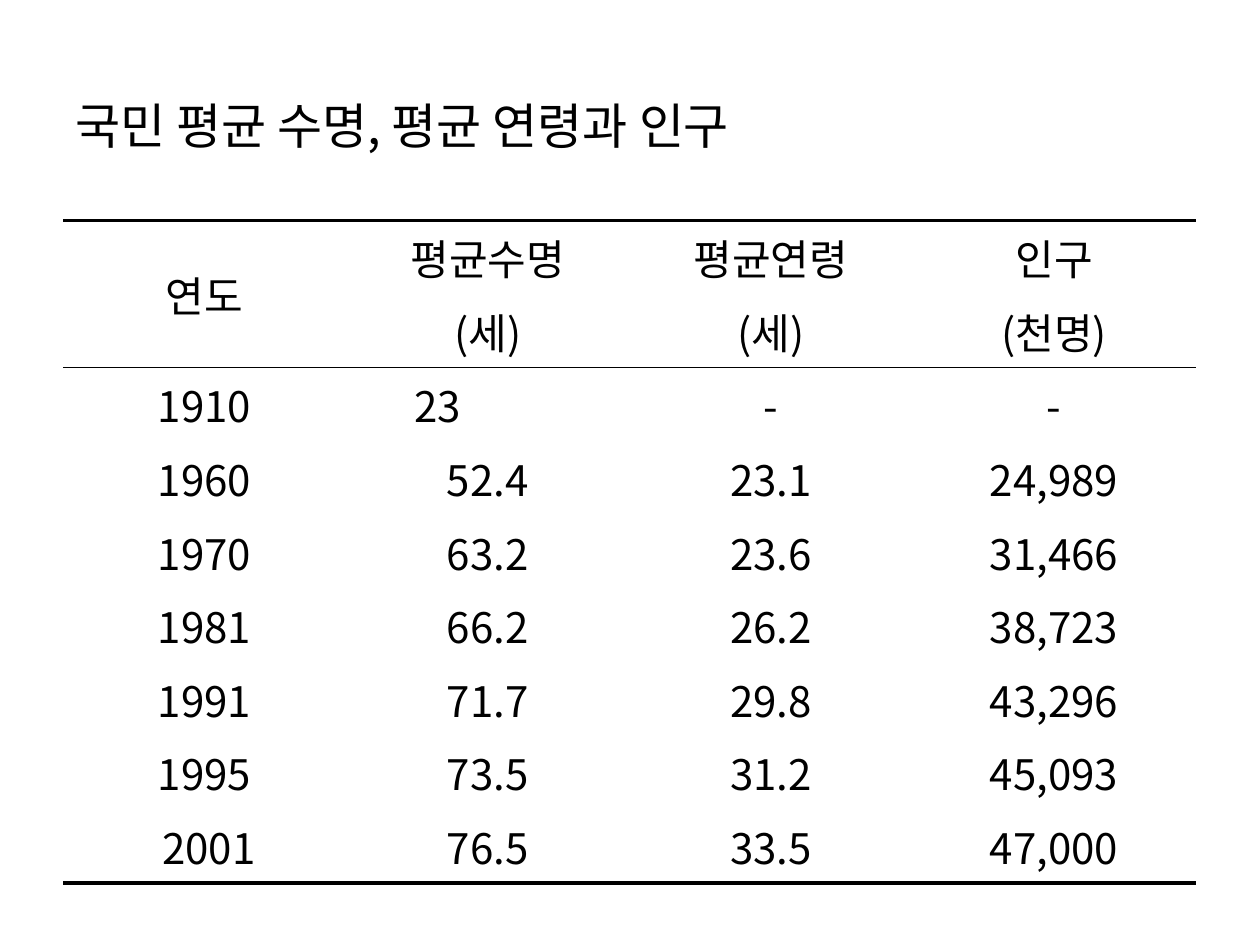
from lxml.etree import SubElement as Sub
from pptx import Presentation
from pptx.dml.color import RGBColor as Rgb
from pptx.enum.text import MSO_ANCHOR as Anchor, PP_ALIGN as Align
from pptx.oxml.ns import qn
from pptx.util import Inches, Pt

TITLE = "국민 평균 수명, 평균 연령과 인구"
ROWS = [
    ("연도", "평균수명", "평균연령", "인구"),
    ("", "(세)", "(세)", "(천명)"),
    ("1910", "23", "-", "-"),
    ("1960", "52.4", "23.1", "24,989"),
    ("1970", "63.2", "23.6", "31,466"),
    ("1981", "66.2", "26.2", "38,723"),
    ("1991", "71.7", "29.8", "43,296"),
    ("1995", "73.5", "31.2", "45,093"),
    ("2001", "76.5", "33.5", "47,000"),
]
HEAD = 2
LEFT = {(2, 1)}
PAD = {(2, 1): 0.54, (8, 0): 0.17}
THEME = {
    "font": "Noto Sans CJK KR", "ink": "000000",
    "title": 28, "body": 24, "thick": 2.25, "thin": 1,
}
PLAIN = {"first_row": False, "horz_banding": False}
WIDE, HIGH = 8.99, 5.26


def write(frame, text, size, align):
    """Put one styled line of text in a frame."""
    para = frame.paragraphs[0]
    para.alignment = align
    run = para.add_run()
    run.text = text
    look = {"name": THEME["font"], "size": Pt(size)}
    for key, val in look.items():
        setattr(run.font, key, val)
    run.font.color.rgb = Rgb.from_string(THEME["ink"])


def rule(cell, edges):
    """Draw the given cell edges and clear the others."""
    props = cell._tc.get_or_add_tcPr()
    for side in "LRTB":
        width = edges.get(side, 0)
        line = Sub(props, qn(f"a:ln{side}"), w=str(Pt(width)))
        if width:
            fill = Sub(line, qn("a:solidFill"))
            Sub(fill, qn("a:srgbClr"), val=THEME["ink"])
        else:
            Sub(line, qn("a:noFill"))


def add_title(slide):
    """Add the heading above the table."""
    box = slide.shapes.add_textbox(*map(Inches, (0.5, 0.52, 6.55, 0.95)))
    frame = box.text_frame
    look = {"word_wrap": True, "vertical_anchor": Anchor.MIDDLE}
    for key, val in look.items():
        setattr(frame, key, val)
    write(frame, TITLE, THEME["title"], Align.LEFT)


def add_grid(slide):
    """Add the ruled table of life span, age and population."""
    rows, cols = len(ROWS), len(ROWS[0])
    size = map(Inches, (0.5, 1.75, WIDE, HIGH))
    table = slide.shapes.add_table(rows, cols, *size).table
    for key, val in PLAIN.items():
        setattr(table, key, val)
    thick, thin = THEME["thick"], THEME["thin"]
    edges = {
        0: {"T": thick}, HEAD - 1: {"B": thin},
        HEAD: {"T": thin}, rows - 1: {"B": thick},
    }
    for r, row in enumerate(ROWS):
        for c, text in enumerate(row):
            cell = table.cell(r, c)
            look = {
                "vertical_anchor": Anchor.MIDDLE,
                "margin_left": Inches(PAD.get((r, c), 0.1)),
            }
            for key, val in look.items():
                setattr(cell, key, val)
            span = edges[HEAD - 1] if (r, c) == (0, 0) else {}
            rule(cell, {**edges.get(r, {}), **span})
            cell.fill.background()
            if text:
                align = Align.LEFT if (r, c) in LEFT else Align.CENTER
                write(cell.text_frame, text, THEME["body"], align)
    table.cell(0, 0).merge(table.cell(HEAD - 1, 0))


def main():
    """Build and save the slide."""
    deck = Presentation()
    deck.slide_width, deck.slide_height = Inches(10), Inches(7.5)
    slide = deck.slides.add_slide(deck.slide_layouts[6])
    add_title(slide)
    add_grid(slide)
    deck.save("out.pptx")


if __name__ == "__main__":
    main()
